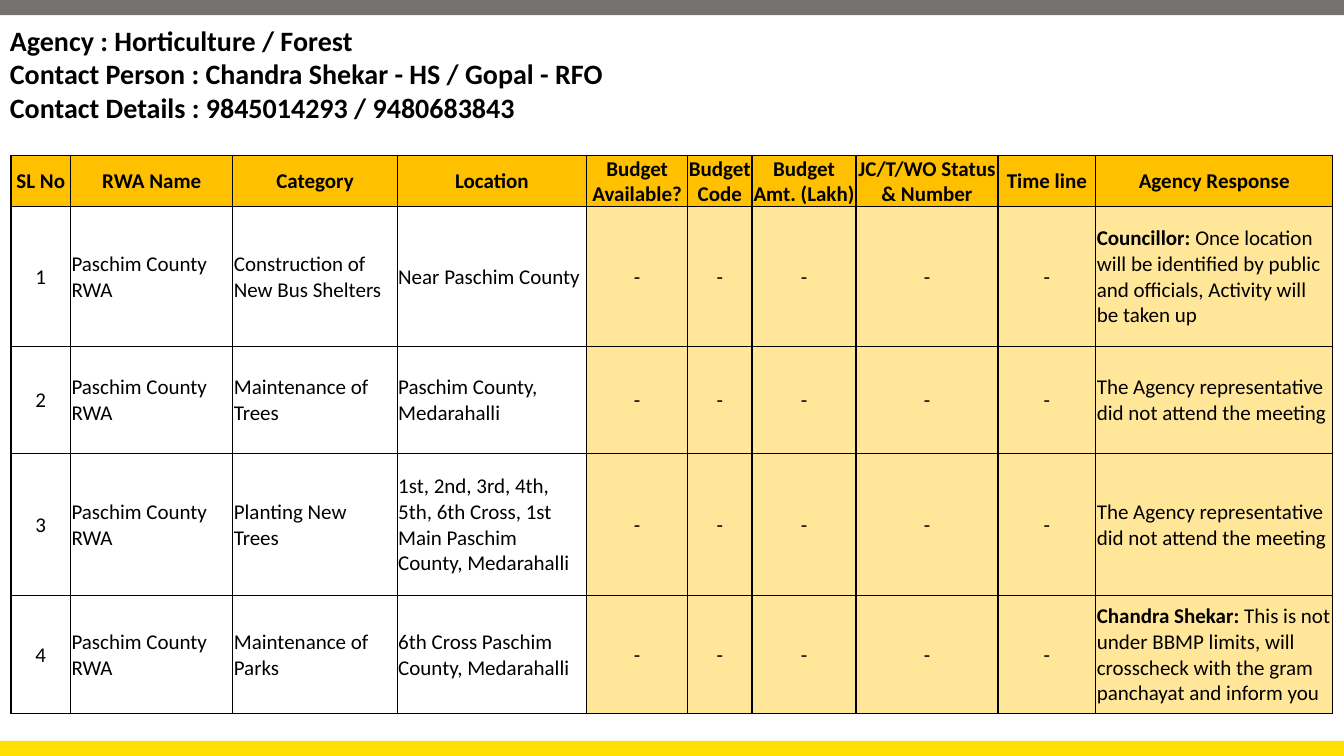
"""Builds the Horticulture / Forest agency response slide."""
import lxml.etree
import pptx
import pptx.dml.color
import pptx.enum.shapes
import pptx.enum.text
import pptx.oxml.ns
import pptx.util

Inches = pptx.util.Inches
RGBColor = pptx.dml.color.RGBColor
ALIGN = pptx.enum.text.PP_ALIGN
qn = pptx.oxml.ns.qn

BLACK = RGBColor(0x00, 0x00, 0x00)
GREY = RGBColor(0x76, 0x71, 0x71)
YELLOW = RGBColor(0xFF, 0xE0, 0x00)
AMBER = RGBColor(0xFF, 0xC0, 0x00)
CREAM = RGBColor(0xFF, 0xE6, 0x99)

CONTACT_LINES = [
    "Agency : Horticulture / Forest",
    "Contact Person : Chandra Shekar - HS / Gopal - RFO",
    "Contact Details : 9845014293 / 9480683843",
]
HEADERS = ["SL No", "RWA Name", "Category", "Location", "Budget Available?", "Budget Code",
           "Budget Amt. (Lakh)", "JC/T/WO Status & Number", "Time line", "Agency Response"]
ABSENT = "The Agency representative did not attend the meeting"
REQUESTS = [
    ("Construction of New Bus Shelters", "Near Paschim County", "Councillor: ",
     "Once location will be identified by public and officials, Activity will be taken up"),
    ("Maintenance of Trees", "Paschim County, Medarahalli", "", ABSENT),
    ("Planting New Trees",
     "1st, 2nd, 3rd, 4th, 5th, 6th Cross, 1st Main Paschim County, Medarahalli", "", ABSENT),
    ("Maintenance of Parks", "6th Cross Paschim County, Medarahalli", "Chandra Shekar: ",
     "This is not under BBMP limits, will crosscheck with the gram panchayat and inform you"),
]
COL_WIDTHS = [0.59, 1.61, 1.63, 1.88, 1, 0.64, 1.03, 1.41, 0.97, 2.35]
ROW_HEIGHTS = [0.5, 1.39, 1.06, 1.41, 1.17]
CENTRED_COLS = {0, 4, 5, 6, 7, 8}
FIRST_AGENCY_COL = 4


def add_run(p, text, size, bold):
    r = p.add_run()
    r.text = text
    r.font.name = "Calibri"
    r.font.size = pptx.util.Pt(size)
    r.font.bold = bold
    r.font.color.rgb = BLACK


def add_borders(cell):
    tc_pr = cell._tc.get_or_add_tcPr()
    for i, side in enumerate(("lnL", "lnR", "lnT", "lnB")):
        ln = lxml.etree.Element(qn(f"a:{side}"), w=str(pptx.util.Pt(1)))
        fill = lxml.etree.SubElement(ln, qn("a:solidFill"))
        lxml.etree.SubElement(fill, qn("a:srgbClr"), val=str(BLACK))
        tc_pr.insert(i, ln)


prs = pptx.Presentation()
prs.slide_width = Inches(13.33)
prs.slide_height = Inches(7.5)
s = prs.slides.add_slide(prs.slide_layouts[6])

for top, color in ((7.35, YELLOW), (0, GREY)):
    sp = s.shapes.add_shape(pptx.enum.shapes.MSO_SHAPE.RECTANGLE,
                            0, Inches(top), prs.slide_width, Inches(0.15))
    sp.shadow.inherit = False
    sp.fill.solid()
    sp.fill.fore_color.rgb = color
    sp.line.fill.background()

tf = s.shapes.add_textbox(0, Inches(0.18), prs.slide_width, Inches(1.11)).text_frame
tf.word_wrap = True
tf.auto_size = pptx.enum.text.MSO_AUTO_SIZE.SHAPE_TO_FIT_TEXT
for i, line in enumerate(CONTACT_LINES):
    p = tf.add_paragraph() if i else tf.paragraphs[0]
    add_run(p, line, 20, True)

rows = [[("", header) for header in HEADERS]]
for number, (category, location, speaker, response) in enumerate(REQUESTS, 1):
    plain = [str(number), "Paschim County RWA", category, location] + ["-"] * 5
    rows.append([("", text) for text in plain] + [(speaker, response)])

table = s.shapes.add_table(len(rows), len(HEADERS), Inches(0.11), Inches(1.54),
                           Inches(13.11), Inches(5.53)).table
for col, width in zip(table.columns, COL_WIDTHS):
    col.width = Inches(width)
for row, height in zip(table.rows, ROW_HEIGHTS):
    row.height = Inches(height)

for i, row in enumerate(rows):
    for j, (lead, text) in enumerate(row):
        is_header = i == 0
        cell = table.cell(i, j)
        cell.margin_left = cell.margin_top = cell.margin_right = Inches(0.01)
        cell.margin_bottom = 0
        cell.vertical_anchor = pptx.enum.text.MSO_ANCHOR.MIDDLE
        if is_header or j >= FIRST_AGENCY_COL:
            cell.fill.solid()
            cell.fill.fore_color.rgb = AMBER if is_header else CREAM
        else:
            cell.fill.background()
        add_borders(cell)
        p = cell.text_frame.paragraphs[0]
        p.alignment = ALIGN.CENTER if is_header or j in CENTRED_COLS else ALIGN.LEFT
        if lead:
            add_run(p, lead, 15, True)
        add_run(p, text, 15, is_header)

prs.save("out.pptx")
